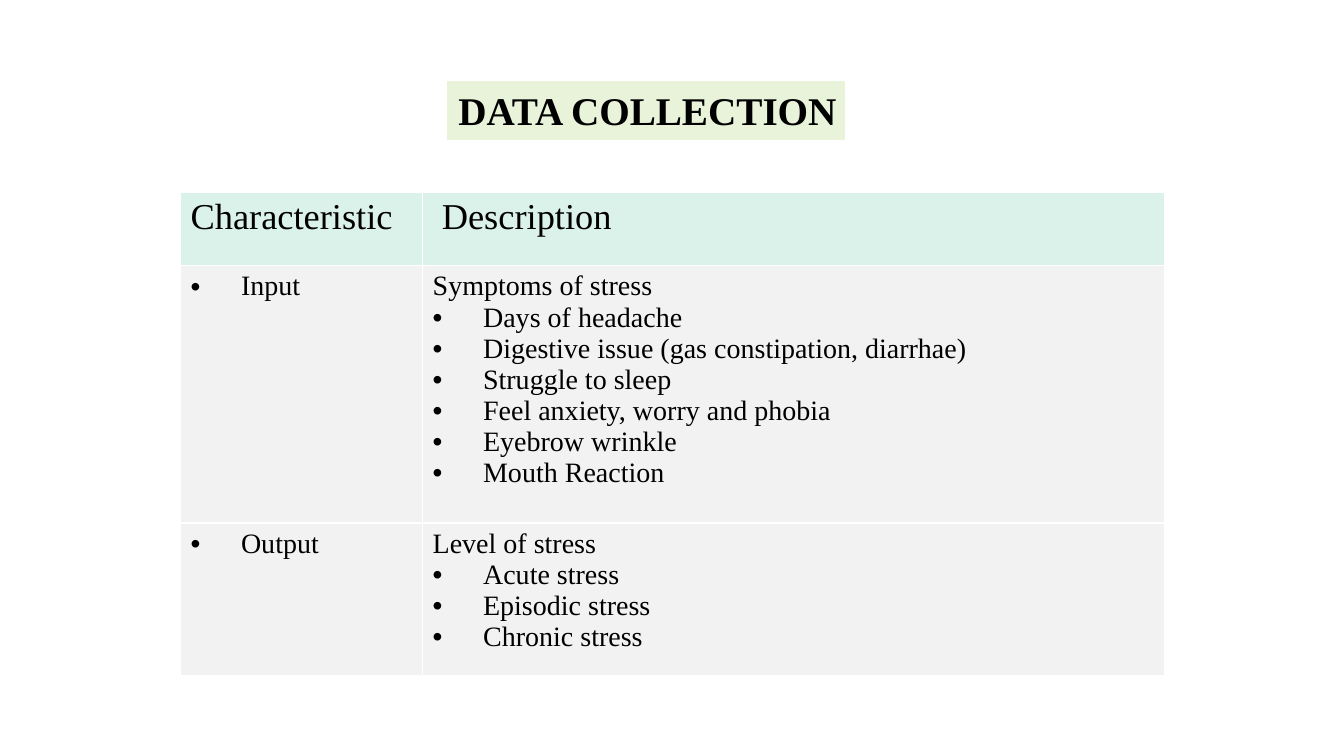
from lxml import etree
from pptx import Presentation
from pptx import util as u
from pptx.dml.color import RGBColor
from pptx.enum import shapes, text
from pptx.oxml.ns import qn

BLACK = RGBColor(0x00, 0x00, 0x00)
WHITE = RGBColor(0xFF, 0xFF, 0xFF)
LIME = RGBColor(0xE8, 0xF3, 0xDA)
MINT = RGBColor(0xDA, 0xF2, 0xE9)
GREY = RGBColor(0xF2, 0xF2, 0xF2)

COLUMN_WIDTHS = [6.1, 18.69]
ROW_HEIGHTS = [1.85, 6.48, 3.84]
HEADER = ["Characteristic", " Description"]
BODY = [
    ("Input", "Symptoms of stress", [
        "Days of headache",
        "Digestive issue (gas constipation, diarrhae)",
        "Struggle to sleep",
        "Feel anxiety, worry and phobia",
        "Eyebrow wrinkle",
        "Mouth Reaction",
    ]),
    ("Output", "Level of stress", [
        "Acute stress",
        "Episodic stress",
        "Chronic stress",
    ]),
]


def write(p, content, size, bold=False):
    r = p.add_run()
    r.text = content
    font = {"name": "Times New Roman", "size": u.Pt(size), "bold": bold}
    for key, value in font.items():
        setattr(r.font, key, value)
    r.font.color.rgb = BLACK


def fill_cell(cell, lines, size, color):
    cell.fill.solid()
    cell.fill.fore_color.rgb = color
    tf = cell.text_frame
    for i, (content, bulleted) in enumerate(lines):
        p = tf.add_paragraph() if i else tf.paragraphs[0]
        write(p, content, size)
        if bulleted:
            pPr = p._p.get_or_add_pPr()
            pPr.set("marL", str(u.Cm(1.27)))
            pPr.set("indent", str(u.Cm(-1.27)))
            etree.SubElement(pPr, qn("a:buFont")).set("typeface", "Arial")
            etree.SubElement(pPr, qn("a:buChar")).set("char", "•")


prs = Presentation()
prs.slide_width, prs.slide_height = u.Cm(33.87), u.Cm(19.05)
s = prs.slides.add_slide(prs.slide_layouts[6])

sp = s.shapes.add_shape(shapes.MSO_SHAPE.RECTANGLE,
                        u.Cm(11.25), u.Cm(2.03), u.Cm(10.06), u.Cm(1.52))
sp.shadow.inherit = False
sp.fill.solid()
sp.fill.fore_color.rgb = LIME
sp.line.color.rgb = WHITE
sp.line.width = u.Pt(1)

title = s.shapes.add_textbox(u.Cm(11.25), u.Cm(2.13), u.Cm(10.13), u.Cm(1.42))
tf = title.text_frame
tf.word_wrap = True
tf.vertical_anchor = text.MSO_ANCHOR.MIDDLE
p = tf.paragraphs[0]
p.alignment = text.PP_ALIGN.CENTER
p.line_spacing = 0.9
write(p, "DATA COLLECTION ", 28, bold=True)

table = s.shapes.add_table(len(ROW_HEIGHTS), len(COLUMN_WIDTHS),
                           u.Cm(4.55), u.Cm(4.85),
                           u.Cm(sum(COLUMN_WIDTHS)), u.Cm(sum(ROW_HEIGHTS))).table
table.first_row = False
table.horz_banding = False
for column, width in zip(table.columns, COLUMN_WIDTHS):
    column.width = u.Cm(width)
for row, height in zip(table.rows, ROW_HEIGHTS):
    row.height = u.Cm(height)

for col, heading in enumerate(HEADER):
    fill_cell(table.cell(0, col), [(heading, False)], 26, MINT)
for row, (name, summary, items) in enumerate(BODY, 1):
    fill_cell(table.cell(row, 0), [(name, True)], 20, GREY)
    lines = [(summary, False)] + [(item, True) for item in items]
    fill_cell(table.cell(row, 1), lines, 20, GREY)

prs.save("out.pptx")
